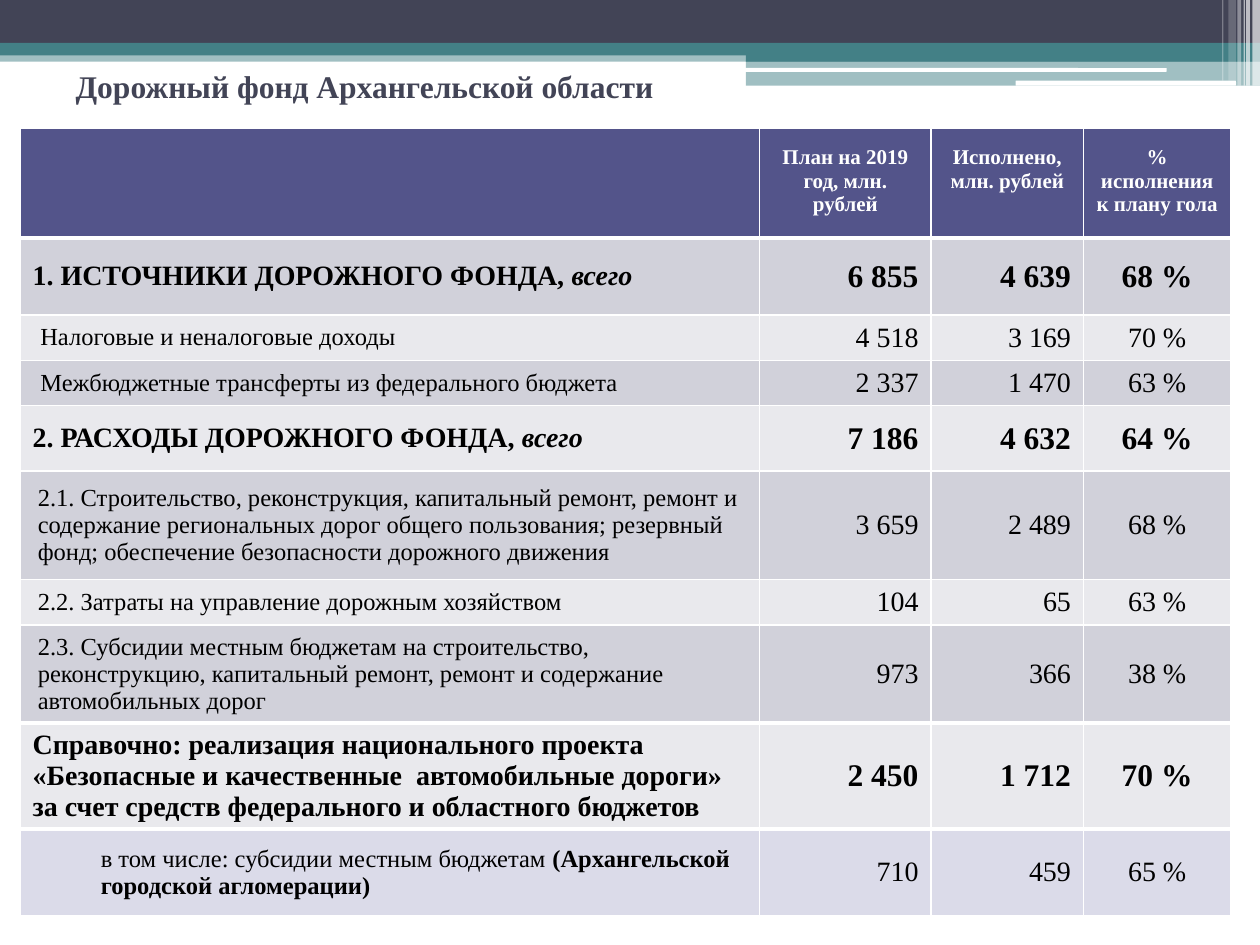
from lxml.etree import SubElement
from pptx import Presentation
from pptx.dml.color import RGBColor
from pptx.enum.shapes import MSO_SHAPE as Shape
from pptx.enum.text import MSO_ANCHOR as Anchor, PP_ALIGN as Align
from pptx.oxml.ns import qn
from pptx.util import Inches, Pt

FONT = "Times New Roman"
COLORS = {
    "ink": "000000", "white": "FFFFFF", "slate": "424456", "teal": "438086",
    "header": "53548A", "dark_band": "D1D1DA", "light_band": "E9E9ED", "last_row": "DBDBE9",
}

TITLE = "Дорожный фонд Архангельской области"
HEADERS = ["", "План на 2019 год, млн. рублей", "Исполнено, млн. рублей", "% исполнения к плану гола"]

# Level of the row, label runs as (text, style), then plan, actual and share
ROWS = [
    ("total", [("1. ИСТОЧНИКИ ДОРОЖНОГО ФОНДА, ", "b"), ("всего", "bi")], "6 855", "4 639", "68 %"),
    ("source", [("Налоговые и неналоговые доходы", "")], "4 518", "3 169", "70 %"),
    ("source", [("Межбюджетные трансферты из федерального бюджета", "")], "2 337", "1 470", "63 %"),
    ("total", [("2. РАСХОДЫ ДОРОЖНОГО ФОНДА, ", "b"), ("всего", "bi")], "7 186", "4 632", "64 %"),
    ("expense", [("2.1. Строительство, реконструкция, капитальный ремонт, ремонт и содержание "
                  "региональных дорог общего пользования; резервный фонд; обеспечение "
                  "безопасности дорожного движения", "")], "3 659", "2 489", "68 %"),
    ("expense", [("2.2. Затраты на управление дорожным хозяйством", "")], "104", "65", "63 %"),
    ("expense", [("2.3. Субсидии местным бюджетам на строительство, реконструкцию, капитальный "
                  "ремонт, ремонт и содержание автомобильных дорог", "")], "973", "366", "38 %"),
    ("total", [("Справочно: реализация национального проекта «Безопасные и качественные  "
                "автомобильные дороги» за счет средств федерального и областного бюджетов", "b")],
     "2 450", "1 712", "70 %"),
    ("detail", [("в том числе: субсидии местным бюджетам ", ""),
                ("(Архангельской городской агломерации)", "b")], "710", "459", "65 %"),
]
LABEL_INDENT = {"total": 0.1, "source": 0.16, "expense": 0.14, "detail": 0.64}
VALUE_ALIGN = [Align.RIGHT, Align.RIGHT, Align.CENTER]
COLUMN_WIDTHS = [5.87, 1.36, 1.21, 1.17]
ROW_HEIGHTS = [0.87, 0.61, 0.36, 0.36, 0.52, 0.86, 0.36, 0.78, 0.78, 0.69]
THICK_BELOW = {0, 7, 8}

# Left, top, width, height, colour, opacity in percent
BANDS = [
    (0, 0.4, 10, 0.09, "teal", 50),
    (0, 0, 10, 0.34, "slate", 100),
    (0, 0.34, 10, 0.1, "teal", 100),
    (5.92, 0.39, 4.08, 0.1, "teal", 100),
    (5.92, 0.48, 4.08, 0.2, "teal", 50),
]
ROUNDED_STRIPES = [(5.91, 0.54, 3.35, 0.03, "white", 100), (8.06, 0.64, 1.75, 0.04, "white", 100)]
# Left, width, height, opacity
CORNER_STRIPES = [
    (9.94, 0.06, 0.68, 65), (9.89, 0.03, 0.68, 65), (9.87, 0.01, 0.68, 60),
    (9.82, 0.03, 0.68, 40), (9.75, 0.06, 0.64, 20), (9.7, 0.01, 0.64, 30),
]


def rgb(name):
    return RGBColor.from_string(COLORS[name])


def add_band(slide, kind, left, top, width, height, color, opacity):
    band = slide.shapes.add_shape(kind, *map(Inches, (left, top, width, height)))
    band.shadow.inherit = False
    band.line.fill.background()
    band.fill.solid()
    band.fill.fore_color.rgb = rgb(color)
    if opacity < 100:
        tint = band.fill._xPr.find(qn("a:solidFill"))[0]
        SubElement(tint, qn("a:alpha"), val=str(opacity * 1000))


def add_run(paragraph, text, size, color, style=""):
    run = paragraph.add_run()
    run.text = text
    font = run.font
    font.name, font.size, font.color.rgb = FONT, Pt(size), rgb(color)
    font.bold, font.italic = "b" in style, "i" in style


def style_cell(cell, row, color):
    """Draw the white borders, then the fill, of a cell in the given row."""
    weights = {"L": 1, "R": 1, "T": 3 if row - 1 in THICK_BELOW else 1,
               "B": 3 if row in THICK_BELOW else 1}
    properties = cell._tc.get_or_add_tcPr()
    for side, weight in weights.items():
        line = SubElement(properties, qn("a:ln" + side), w=str(Pt(weight)))
        SubElement(SubElement(line, qn("a:solidFill")), qn("a:srgbClr"), val=COLORS["white"])
    cell.fill.solid()
    cell.fill.fore_color.rgb = rgb(color)
    cell.vertical_anchor = Anchor.MIDDLE


def write_cell(cell, runs, size, color, align):
    paragraph = cell.text_frame.paragraphs[0]
    paragraph.alignment = align
    for text, style in runs:
        add_run(paragraph, text, size, color, style)


def add_title(slide):
    title = slide.shapes.title
    title.left, title.top, title.width, title.height = map(Inches, (0.2, 0.13, 7.56, 0.65))
    frame = title.text_frame
    frame.word_wrap = True
    frame.vertical_anchor = Anchor.TOP
    frame.margin_left, frame.margin_top, frame.margin_bottom = Inches(0.4), Inches(0.4), 0
    frame.paragraphs[0].alignment = Align.LEFT
    add_run(frame.paragraphs[0], TITLE, 18, "slate", "b")


def add_fund_table(slide):
    table = slide.shapes.add_table(
        len(ROW_HEIGHTS), len(COLUMN_WIDTHS), Inches(0.16), Inches(1.02),
        Inches(sum(COLUMN_WIDTHS)), Inches(sum(ROW_HEIGHTS))).table
    for column, width in zip(table.columns, COLUMN_WIDTHS):
        column.width = Inches(width)
    for row, height in zip(table.rows, ROW_HEIGHTS):
        row.height = Inches(height)

    for column, header in enumerate(HEADERS):
        cell = table.cell(0, column)
        style_cell(cell, 0, "header")
        cell.vertical_anchor = Anchor.TOP
        cell.margin_top = Inches(0.14)
        if header:
            write_cell(cell, [(header, "b")], 12, "white", Align.CENTER)

    for row, (level, label, *values) in enumerate(ROWS, 1):
        is_total = level == "total"
        band = "last_row" if level == "detail" else "dark_band" if row % 2 else "light_band"
        cells = [table.cell(row, column) for column in range(len(COLUMN_WIDTHS))]
        for cell in cells:
            style_cell(cell, row, band)
        cells[0].margin_left = Inches(LABEL_INDENT[level])
        write_cell(cells[0], label, 16 if is_total else 14, "ink", Align.LEFT)
        for cell, value, align in zip(cells[1:], values, VALUE_ALIGN):
            write_cell(cell, [(value, "b" if is_total else "")], 18 if is_total else 16, "ink", align)


def main():
    deck = Presentation()
    deck.slide_width, deck.slide_height = Inches(10), Inches(7.5)
    slide = deck.slides.add_slide(deck.slide_layouts[5])
    for band in BANDS:
        add_band(slide, Shape.RECTANGLE, *band)
    for stripe in ROUNDED_STRIPES:
        add_band(slide, Shape.ROUNDED_RECTANGLE, *stripe)
    for left, width, height, opacity in CORNER_STRIPES:
        add_band(slide, Shape.RECTANGLE, left, 0, width, height, "white", opacity)
    add_title(slide)
    slide.shapes._spTree.append(slide.shapes.title._element)  # title in front of the bands
    add_fund_table(slide)
    deck.save("out.pptx")


if __name__ == "__main__":
    main()
